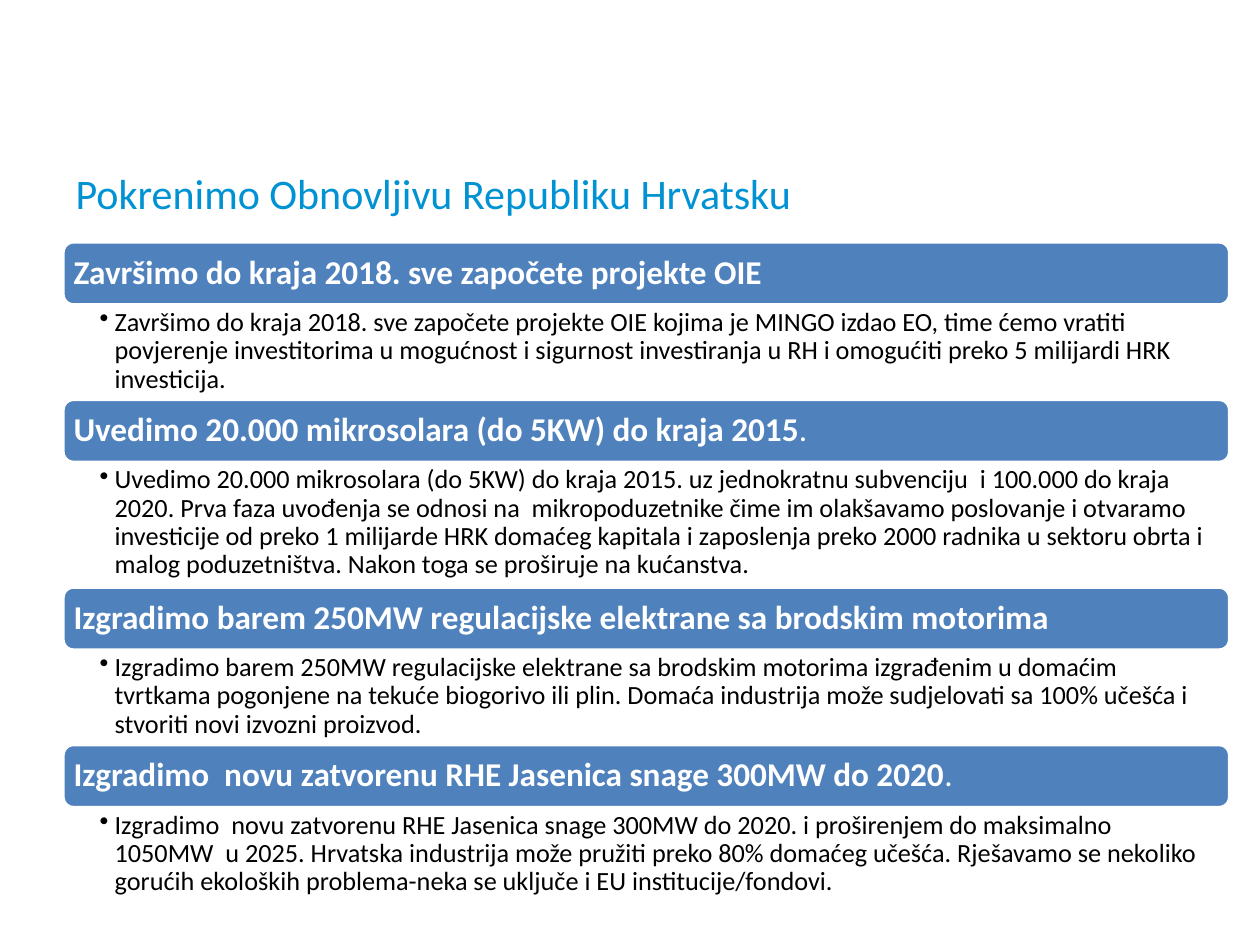
from lxml import etree
from pptx import Presentation
from pptx.dml.color import RGBColor
from pptx.enum.shapes import MSO_SHAPE
from pptx.enum.text import MSO_ANCHOR, MSO_AUTO_SIZE, PP_ALIGN
from pptx.oxml.ns import qn
from pptx.util import Inches, Pt

ROUNDED = MSO_SHAPE.ROUNDED_RECTANGLE
MIDDLE, TOP = MSO_ANCHOR.MIDDLE, MSO_ANCHOR.TOP
LEFT = PP_ALIGN.LEFT
NO_AUTOFIT = MSO_AUTO_SIZE.NONE

COLORS = {"title": "0092D2", "banner": "4F81BD", "white": "FFFFFF", "body": "000000"}
FONT = "Calibri"

# Column of measures
COLUMN_LEFT, COLUMN_TOP, COLUMN_WIDTH = 0.5, 1.92, 9.26
BANNER_HEIGHT = 0.5
HANGING = 0.12

# Heading, unbolded ending, explanation, height of explanation
MEASURES = [
    ("Završimo do kraja 2018. sve započete projekte OIE", "",
     "Završimo do kraja 2018. sve započete projekte OIE kojima je MINGO izdao EO, "
     "time ćemo vratiti povjerenje investitorima u mogućnost i sigurnost investiranja "
     "u RH i omogućiti preko 5 milijardi HRK investicija.", 0.75),
    ("Uvedimo 20.000 mikrosolara (do 5KW) do kraja 2015", ".",
     "Uvedimo 20.000 mikrosolara (do 5KW) do kraja 2015. uz jednokratnu subvenciju  "
     "i 100.000 do kraja 2020. Prva faza uvođenja se odnosi na  mikropoduzetnike čime "
     "im olakšavamo poslovanje i otvaramo investicije od preko 1 milijarde HRK domaćeg "
     "kapitala i zaposlenja preko 2000 radnika u sektoru obrta i malog poduzetništva. "
     "Nakon toga se proširuje na kućanstva.", 0.99),
    ("Izgradimo barem 250MW regulacijske elektrane sa brodskim motorima", "",
     "Izgradimo barem 250MW regulacijske elektrane sa brodskim motorima izgrađenim u "
     "domaćim tvrtkama pogonjene na tekuće biogorivo ili plin. Domaća industrija može "
     "sudjelovati sa 100% učešća i stvoriti novi izvozni proizvod.", 0.75),
    ("Izgradimo  novu zatvorenu RHE Jasenica snage 300MW do 2020", ".",
     "Izgradimo  novu zatvorenu RHE Jasenica snage 300MW do 2020. i proširenjem do "
     "maksimalno 1050MW  u 2025. Hrvatska industrija može pružiti preko 80% domaćeg "
     "učešća. Rješavamo se nekoliko gorućih ekoloških problema-neka se uključe i EU "
     "institucije/fondovi.", 0.75),
]


def apply_format(target, values):
    for name, value in values.items():
        setattr(target, name, value)


def add_run(paragraph, text, size, color, bold=False):
    run = paragraph.add_run()
    run.text = text
    apply_format(run.font, {"name": FONT, "size": Pt(size), "bold": bold})
    run.font.color.rgb = RGBColor.from_string(COLORS[color])


def format_frame(frame, anchor, left, top, right, bottom):
    apply_format(frame, {
        "word_wrap": True, "auto_size": NO_AUTOFIT, "vertical_anchor": anchor,
        "margin_left": Inches(left), "margin_top": Inches(top),
        "margin_right": Inches(right), "margin_bottom": Inches(bottom),
    })


def add_bullet(paragraph):
    properties = paragraph._p.get_or_add_pPr()
    properties.set("marL", str(Inches(HANGING)))
    properties.set("indent", str(-Inches(HANGING)))
    etree.SubElement(properties, qn("a:buChar")).set("char", "•")


def set_title(slide, text):
    title = slide.shapes.title
    apply_format(title, {"left": Inches(0.5), "top": Inches(1.28),
                         "width": Inches(9), "height": Inches(0.5)})
    format_frame(title.text_frame, MIDDLE, 0.1, 0.05, 0.1, 0.05)
    paragraph = title.text_frame.paragraphs[0]
    paragraph.alignment = LEFT
    add_run(paragraph, text, 24, "title")


def add_banner(slide, top, heading, ending):
    banner = slide.shapes.add_shape(ROUNDED, Inches(COLUMN_LEFT), Inches(top),
                                    Inches(COLUMN_WIDTH), Inches(BANNER_HEIGHT))
    banner.shadow.inherit = False
    banner.fill.solid()
    banner.fill.fore_color.rgb = RGBColor.from_string(COLORS["banner"])
    banner.line.color.rgb = RGBColor.from_string(COLORS["white"])
    banner.line.width = Pt(2)
    # The rounded corners add to the side margins
    format_frame(banner.text_frame, MIDDLE, 0.06, 0.06, 0.06, 0.06)
    paragraph = banner.text_frame.paragraphs[0]
    apply_format(paragraph, {"alignment": LEFT, "line_spacing": 0.9})
    add_run(paragraph, heading, 19, "white", bold=True)
    if ending:
        add_run(paragraph, ending, 19, "white")


def add_explanation(slide, top, height, text):
    box = slide.shapes.add_textbox(Inches(COLUMN_LEFT), Inches(top),
                                   Inches(COLUMN_WIDTH), Inches(height))
    format_frame(box.text_frame, TOP, 0.29, 0.03, 0.15, 0.03)
    paragraph = box.text_frame.paragraphs[0]
    add_bullet(paragraph)
    apply_format(paragraph, {"alignment": LEFT, "line_spacing": 0.9})
    add_run(paragraph, text, 15, "body")


def main():
    prs = Presentation()
    prs.slide_width, prs.slide_height = Inches(10), Inches(7.5)
    slide = prs.slides.add_slide(prs.slide_layouts[5])
    set_title(slide, "Pokrenimo Obnovljivu Republiku Hrvatsku")

    # Banners and explanations stacked without gaps
    top = COLUMN_TOP
    for heading, ending, explanation, height in MEASURES:
        add_banner(slide, top, heading, ending)
        add_explanation(slide, top + BANNER_HEIGHT, height, explanation)
        top += BANNER_HEIGHT + height

    prs.save("out.pptx")


if __name__ == "__main__":
    main()
